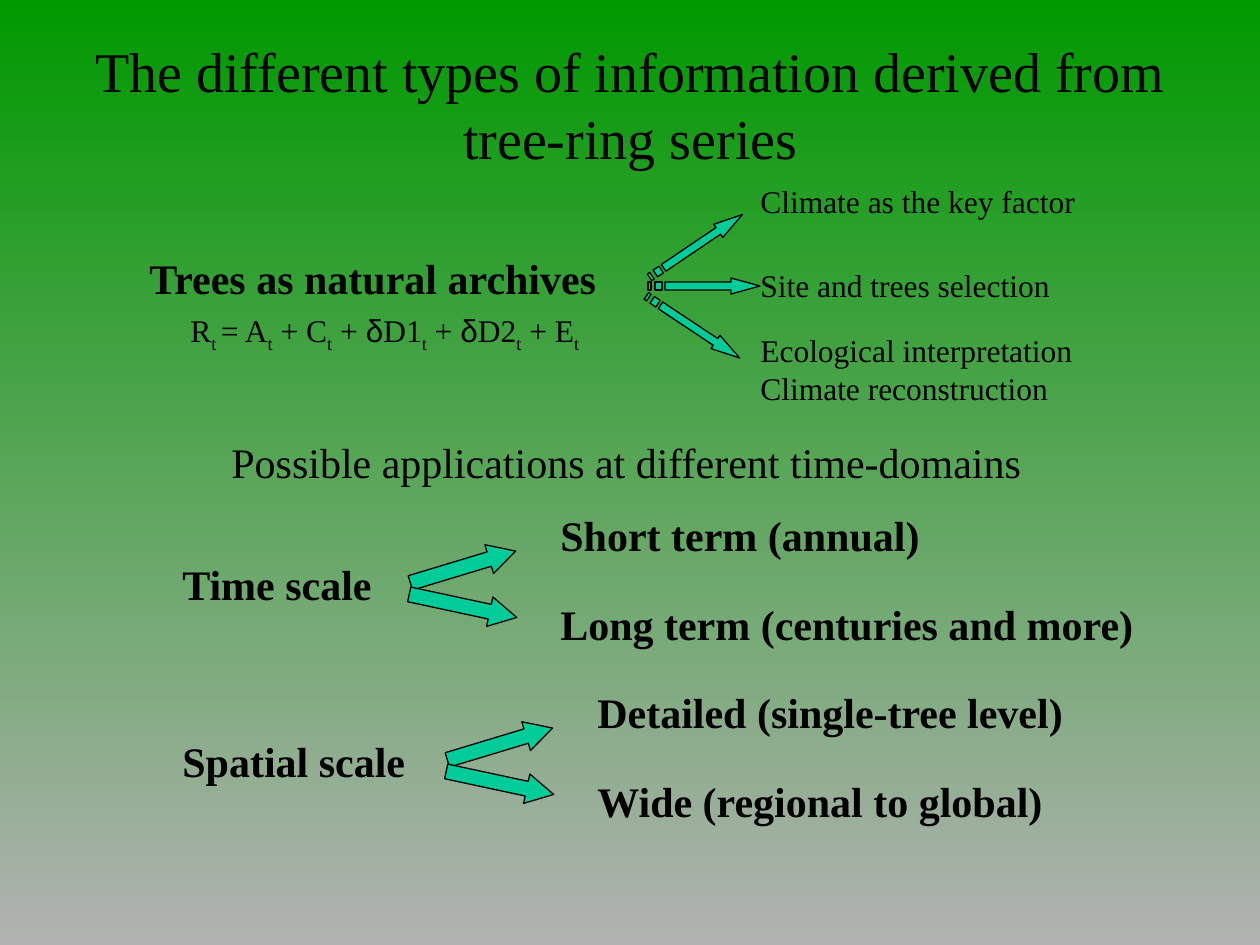
from pptx import Presentation
from pptx.dml.color import RGBColor
from pptx.enum.shapes import MSO_SHAPE
from pptx.enum.text import MSO_AUTO_SIZE, PP_ALIGN
from pptx.util import Pt

PX = 914400 // 126
ARROW = MSO_SHAPE.RIGHT_ARROW
LEFT, CENTER = PP_ALIGN.LEFT, PP_ALIGN.CENTER
GROW = MSO_AUTO_SIZE.SHAPE_TO_FIT_TEXT
SERIF, SANS = "Times New Roman", "Arial"
BLACK, TEAL = "000000", "00CC99"

# Outline of a striped arrow: head with shaft, then two stripes
STRIPED = [
    [(83, 0), (83, 4), (17, 4), (17, 12), (83, 12), (83, 16), (112, 8)],
    [(7, 4), (7, 12), (14, 12), (14, 4)],
    [(0, 4), (0, 12), (3, 12), (3, 4)],
]
# Formula pieces: "_" marks a subscript, "δ" is set in the sans font
FORMULA = ["R", "_t ", "= A", "_t", " + C", "_t", " + ", "δ", "D1", "_t",
           " + ", "δ", "D2", "_t", " + E", "_t"]


def color(code):
    return RGBColor.from_string(code)


def style(font, size, bold=False):
    font.name, font.size, font.bold = SERIF, Pt(size), bold
    font.color.rgb = color(BLACK)


def add_text(slide, box, lines, size, bold=False, align=LEFT, wrap=False):
    frame = slide.shapes.add_textbox(*(v * PX for v in box)).text_frame
    frame.word_wrap = wrap
    frame.auto_size = GROW
    frame.text = lines
    for para in frame.paragraphs:
        para.alignment = align
        style(para.font, size, bold)
    return frame


def add_formula(slide, box, parts):
    para = add_text(slide, box, "", 18, wrap=True).paragraphs[0]
    for part in parts:
        run = para.add_run()
        run.text = part.lstrip("_")
        style(run.font, 18)
        if part == "δ":
            run.font.name = SANS
        if part.startswith("_"):
            run._r.get_or_add_rPr().set("baseline", "-25000")


def paint(shape, angle):
    shape.shadow.inherit = False
    shape.fill.solid()
    shape.fill.fore_color.rgb = color(TEAL)
    shape.line.color.rgb = color(BLACK)
    shape.line.width = Pt(0.75)
    shape.rotation = angle


def add_striped(slide, left, top, angle):
    first, *rest = STRIPED
    form = slide.shapes.build_freeform(*first[0], scale=PX)
    form.add_line_segments(first[1:])
    for stripe in rest:
        form.move_to(*stripe[0])
        form.add_line_segments(stripe[1:])
    paint(form.convert_to_shape(left * PX, top * PX), angle)


def add_arrow(slide, left, top, angle):
    shape = slide.shapes.add_shape(
        ARROW, left * PX, top * PX, 110 * PX, 30 * PX)
    shape.adjustments[0], shape.adjustments[1] = 0.5, 0.92
    paint(shape, angle)


def add_scale(slide, top, shift, label, width, options):
    """A label that forks into two options."""
    add_text(slide, (170, top + 49, width, 64), label, 24, True)
    for row, (option, wide) in enumerate(options):
        box = (548 + shift, top + row * 89, wide, 64)
        add_text(slide, box, option, 24, True)
    for row, angle in enumerate((343.2, 12.1)):
        add_arrow(slide, 408 + shift, top + 49 + row * 39, angle)


def main():
    deck = Presentation()
    deck.slide_width, deck.slide_height = 1260 * PX, 945 * PX
    slide = deck.slides.add_slide(deck.slide_layouts[6])

    # Background, top to bottom
    fill = slide.background.fill
    fill.gradient()
    fill.gradient_angle = 270
    for stop, code in zip(fill.gradient_stops, ("009900", "B2B2B2")):
        stop.color.rgb = color(code)

    add_text(slide, (78, 30, 1105, 149),
             "The different types of information derived from\n"
             "tree-ring series", 32, align=CENTER)

    # Archives and what they give
    add_text(slide, (137, 246, 474, 63), "Trees as natural archives", 24, True)
    add_formula(slide, (178, 305, 452, 50), FORMULA)
    for top, width, high, lines in (
            (176, 344, 50, "Climate as the key factor"),
            (260, 318, 50, "Site and trees selection"),
            (325, 345, 88,
             "Ecological interpretation\nClimate reconstruction")):
        add_text(slide, (748, top, width, high), lines, 18)
    for left, top, angle in ((640, 238, 325.9), (648, 278, 0),
                             (637, 319, 33.6)):
        add_striped(slide, left, top, angle)

    # Applications
    add_text(slide, (219, 430, 822, 63),
             "Possible applications at different time-domains", 24, wrap=True)
    add_scale(slide, 503, 0, "Time scale", 217,
              [("Short term (annual)", 388),
               ("Long term (centuries and more)", 604)])
    add_scale(slide, 680, 37, "Spatial scale", 251,
              [("Detailed (single-tree level)", 495),
               ("Wide (regional to global)", 475)])

    deck.save("out.pptx")


if __name__ == "__main__":
    main()
